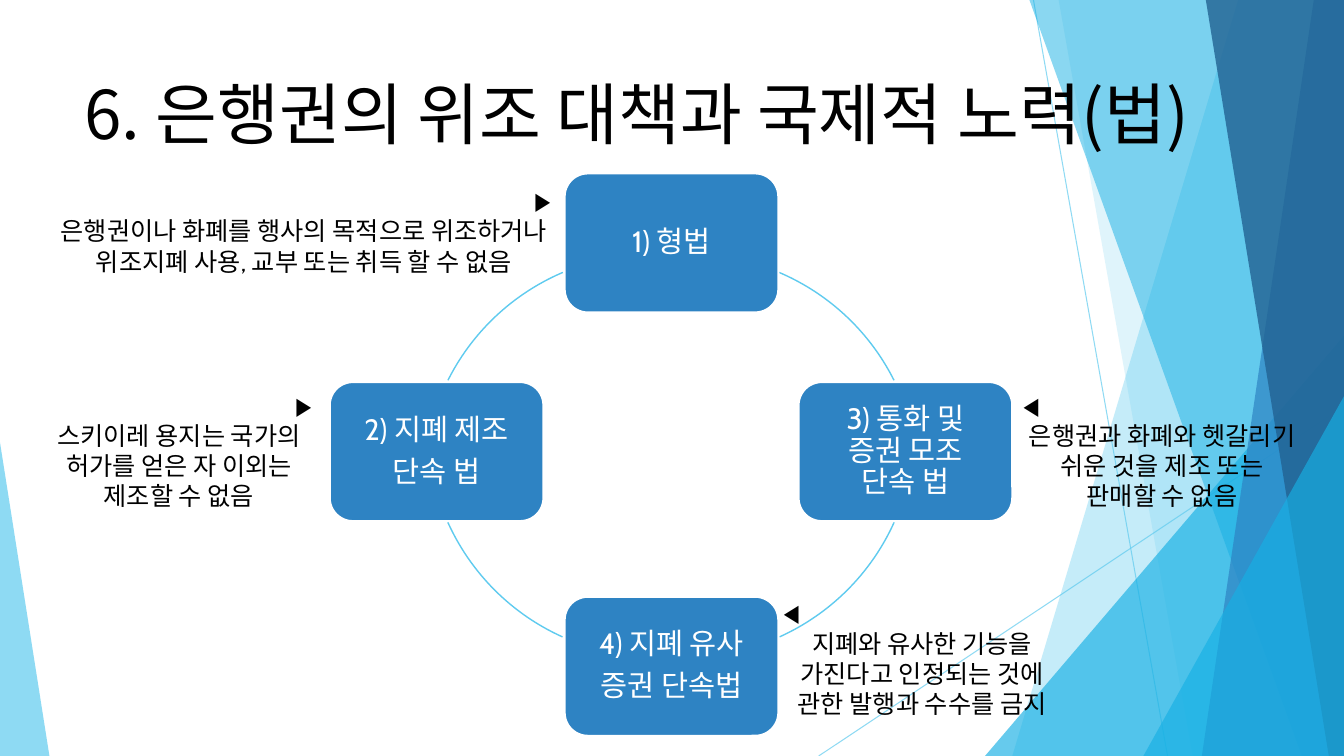
from lxml import etree
from pptx import Presentation
from pptx.dml.color import RGBColor
from pptx.enum.shapes import MSO_CONNECTOR, MSO_SHAPE
from pptx.enum.text import MSO_ANCHOR, PP_ALIGN
from pptx.oxml.ns import qn
from pptx.util import Pt

PX = 9144  # 100 px to the inch
LEFT, CENTER, RIGHT = PP_ALIGN.LEFT, PP_ALIGN.CENTER, PP_ALIGN.RIGHT
WIDTH, HEIGHT = 1333, 750
SKY, CYAN, BLUE, NAVY = "5FCBEF", "17B0E4", "2E83C3", "226292"
WHITE, BLACK = "FFFFFF", "000000"


def paint(color_format, color, opacity=100):
    """Set a colour, and its opacity in percent."""
    color_format.rgb = RGBColor.from_string(color)
    if opacity < 100:
        color_element = color_format._xFill[0]
        alpha = etree.SubElement(color_element, qn("a:alpha"))
        alpha.set("val", str(opacity * 1000))


def write(shape, paragraphs, font_name, size, color, paragraph_format, inset=(10, 5)):
    """Fill a shape with (text, alignment) paragraphs of one style."""
    frame = shape.text_frame
    frame.word_wrap = True
    frame.margin_left = frame.margin_right = inset[0] * PX
    frame.margin_top = frame.margin_bottom = inset[1] * PX
    for index, (text, alignment) in enumerate(paragraphs):
        paragraph = frame.paragraphs[0] if index == 0 else frame.add_paragraph()
        for name, value in {"alignment": alignment, **paragraph_format}.items():
            setattr(paragraph, name, value)
        run = paragraph.add_run()
        run.text = text
        run.font.name, run.font.size = font_name, Pt(size)
        paint_target = run.font.fill
        paint_target.solid()
        paint(paint_target.fore_color, color)
        east_asian = etree.SubElement(run.font._element, qn("a:ea"))
        east_asian.set("typeface", font_name)


presentation = Presentation()
presentation.slide_width, presentation.slide_height = WIDTH * PX, HEIGHT * PX
slide = presentation.slides.add_slide(presentation.slide_layouts[6])
shapes = slide.shapes

# Background: two thin lines and translucent facets
for ends in [(1025, 0, 1158, HEIGHT), (WIDTH, 403, 812, HEIGHT)]:
    line = shapes.add_connector(MSO_CONNECTOR.STRAIGHT, *[value * PX for value in ends])
    line.line.width = Pt(0.75)
    line.line.fill.solid()
    paint(line.line.fill.fore_color, SKY, 70)
    etree.SubElement(line._element.spPr, qn("a:effectLst"))

right_edge = [(WIDTH, 0), (WIDTH, HEIGHT)]
facets = [
    ([(1228, 0), *right_edge, (1004, HEIGHT)], SKY, 36),
    ([(1050, 0), *right_edge, (1183, HEIGHT)], SKY, 20),
    ([(WIDTH, 333), (WIDTH, HEIGHT), (977, HEIGHT)], CYAN, 66),
    ([(1021, 0), *right_edge, (1291, HEIGHT)], CYAN, 50),
    ([(1303, 0), *right_edge, (1192, HEIGHT)], BLUE, 70),
    ([(1196, 0), *right_edge, (1318, HEIGHT)], NAVY, 80),
    ([(WIDTH, 393), (WIDTH, HEIGHT), (1134, HEIGHT)], CYAN, 66),
    ([(0, 439), (49, HEIGHT), (0, HEIGHT)], SKY, 70),
]
for points, color, opacity in facets:
    builder = shapes.build_freeform(*points[0], scale=PX)
    builder.add_line_segments(points[1:])
    facet = builder.convert_to_shape()
    facet.shadow.inherit = False
    facet.line.fill.background()
    facet.fill.solid()
    paint(facet.fill.fore_color, color, opacity)

title = shapes.add_textbox(74 * PX, 67 * PX, 1259 * PX, 105 * PX)
write(title, [("6. 은행권의 위조 대책과 국제적 노력(법)", LEFT)],
      "Noto Sans CJK KR", 48, BLACK, {})

# Cycle: arcs of one circle size, with angles clockwise from the right
ARC_SIZE = 455
arcs = [
    (456, 252, 293.1, 333.3),
    (452, 197, 24.3, 65.7),
    (424, 197, 114.3, 155.7),
    (420, 252, 206.7, 246.9),
]
for left, top, start, end in arcs:
    arc = shapes.add_shape(MSO_SHAPE.ARC, left * PX, top * PX, ARC_SIZE * PX, ARC_SIZE * PX)
    arc.adjustments[0], arc.adjustments[1] = start * 0.6, end * 0.6
    arc.shadow.inherit = False
    arc.fill.background()
    arc.line.width = Pt(1)
    paint(arc.line.color, SKY)

laws = [
    (560, 172, ["1) 형법"]),
    (792, 379, ["3) 통화 및 증권 모조 단속 법"]),
    (560, 592, ["4) 지폐 유사", "증권 단속법"]),
    (327, 379, ["2) 지폐 제조", "단속 법"]),
]
for left, top, lines in laws:
    law = shapes.add_shape(MSO_SHAPE.ROUNDED_RECTANGLE, left * PX, top * PX, 212 * PX, 138 * PX)
    law.shadow.inherit = False
    law.fill.solid()
    paint(law.fill.fore_color, BLUE)
    law.line.width = Pt(1.5)
    paint(law.line.color, WHITE)
    law.text_frame.vertical_anchor = MSO_ANCHOR.MIDDLE
    write(law, [(text, CENTER) for text in lines], "Cabin", 21, WHITE,
          {"line_spacing": 0.9, "space_after": Pt(7.35)}, inset=(16, 16))

# Notes beside the laws, each with a marker pointing at its law
notes = [
    (36, 382, 283, "▶", RIGHT, "스키이레 용지는 국가의 허가를 얻은 자 이외는 제조할 수 없음"),
    (47, 179, 509, "▶", RIGHT,
     "은행권이나 화폐를 행사의 목적으로 위조하거나 위조지폐 사용, 교부 또는 취득 할 수 없음"),
    (1005, 382, 295, "◀", LEFT, "은행권과 화폐와 헷갈리기 쉬운 것을 제조 또는 판매할 수 없음"),
    (767, 588, 295, "◀", LEFT,
     "지폐와 유사한 기능을 가진다고 인정되는 것에 관한 발행과 수수를 금지"),
]
for left, top, width, marker, side, text in notes:
    note = shapes.add_textbox(left * PX, top * PX, width * PX, 162 * PX)
    write(note, [(marker, side), (text, CENTER)], "Cabin", 18, BLACK, {})

presentation.save("out.pptx")
